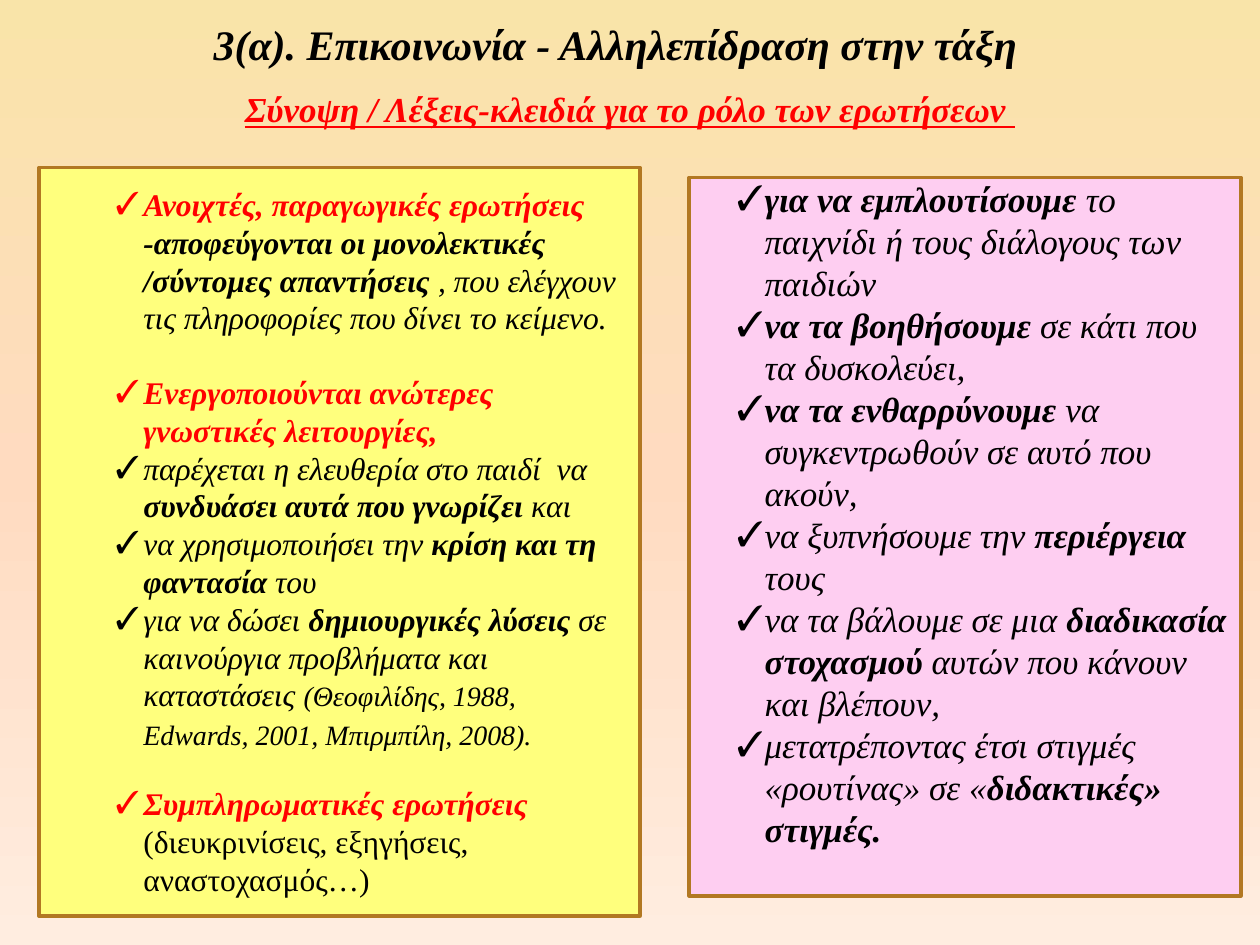
from copy import deepcopy

from lxml.etree import SubElement
from pptx import Presentation
from pptx.dml.color import RGBColor
from pptx.enum.shapes import MSO_SHAPE as Preset
from pptx.enum.text import MSO_ANCHOR as Anchor, PP_ALIGN as Align
from pptx.oxml.ns import qn
from pptx.util import Inches, Pt

BLACK, RED, BROWN = "000000", "FF0000", "B27822"
YELLOW, PINK = "FFFF7D", "FECEF1"
BACKDROP = [("F9E4A9", 0), ("FFDBC0", 0.5), ("FFEDE0", 1)]


def color(value):
    return RGBColor.from_string(value)


def write(para, text, size=18, ink=BLACK, bold=False, italic=True, underline=False):
    span = para.add_run()
    span.text = text
    font = span.font
    font.name, font.size = "Times New Roman", Pt(size)
    font.bold, font.italic, font.underline = bold, italic, underline
    font.color.rgb = color(ink)


class Board:
    def __init__(self, deck):
        self.deck = deck
        self.page = deck.slides.add_slide(deck.slide_layouts[6])

    def across(self, percent):
        return round(self.deck.slide_width * percent / 100)

    def down(self, percent):
        return round(self.deck.slide_height * percent / 100)

    def place(self, left, top, width, height):
        return self.across(left), self.down(top), self.across(width), self.down(height)

    def background(self, stops):
        fill = self.page.background.fill
        fill.gradient()
        fill.gradient_angle = 270
        stop_list = next(self.page.element.iter(qn("a:gsLst")))
        stop_list.insert(1, deepcopy(stop_list[0]))
        for stop, (value, position) in zip(fill.gradient_stops, stops):
            stop.color.rgb = color(value)
            stop.position = position

    def heading(self, text, area, **style):
        frame = self.page.shapes.add_textbox(*self.place(*area)).text_frame
        frame.word_wrap = True
        frame.vertical_anchor = Anchor.MIDDLE
        frame.margin_top = frame.margin_bottom = 0
        para = frame.paragraphs[0]
        para.alignment = Align.CENTER
        write(para, text, bold=True, **style)

    def panel(self, area, fill, items, size, inset, indent):
        box = self.page.shapes.add_shape(Preset.RECTANGLE, *self.place(*area))
        box.shadow.inherit = False
        box.fill.solid()
        box.fill.fore_color.rgb = color(fill)
        box.line.color.rgb = color(BROWN)
        box.line.width = Pt(2)
        frame = box.text_frame
        frame.word_wrap = True
        frame.vertical_anchor = Anchor.TOP
        frame.margin_top, frame.margin_bottom = Pt(inset), 0
        for number, (gap, spans) in enumerate(items):
            para = frame.add_paragraph() if number else frame.paragraphs[0]
            para.alignment = Align.LEFT
            para.line_spacing = Pt(size * 1.2)
            para.space_before = Pt(gap)
            self.bullet(para, indent)
            for text, style in spans:
                write(para, text, **{"size": size, **style})

    def bullet(self, para, indent):
        para.line_spacing = para.line_spacing
        props = para._p.get_or_add_pPr()
        props.set("marL", str(self.across(indent)))
        props.set("indent", str(-self.across(2.2)))
        SubElement(props, qn("a:buFont")).set("typeface", "Times New Roman")
        SubElement(props, qn("a:buChar")).set("char", "✓")


PLAIN, BOLD = {}, {"bold": True}
KEY = {"bold": True, "ink": RED}
UPRIGHT, SMALL = {"italic": False}, {"size": 16}

QUESTIONS = [
    (0, [("Ανοιχτές, παραγωγικές ερωτήσεις", KEY),
         (" -αποφεύγονται οι μονολεκτικές /σύντομες απαντήσεις ", BOLD),
         (", που ελέγχουν τις πληροφορίες που δίνει το κείμενο.", PLAIN)]),
    (21, [("Ενεργοποιούνται ανώτερες γνωστικές λειτουργίες,", KEY)]),
    (0, [("παρέχεται η ελευθερία στο παιδί  να ", PLAIN),
         ("συνδυάσει αυτά που γνωρίζει ", BOLD), ("και", PLAIN)]),
    (0, [("να χρησιμοποιήσει την ", PLAIN),
         ("κρίση και τη φαντασία ", BOLD), ("του", PLAIN)]),
    (0, [("για να δώσει ", PLAIN), ("δημιουργικές λύσεις", BOLD),
         (" σε καινούργια προβλήματα και καταστάσεις ", PLAIN),
         ("(Θεοφιλίδης, 1988, Edwards, 2001, Μπιρμπίλη, 2008).", SMALL)]),
    (19, [("Συμπληρωματικές ερωτήσεις ", KEY),
          ("(διευκρινίσεις, εξηγήσεις, αναστοχασμός…)", UPRIGHT)]),
]

PURPOSES = [
    (0, [("για να εμπλουτίσουμε ", BOLD),
         ("το παιχνίδι ή τους διάλογους των παιδιών", PLAIN)]),
    (0, [("να τα βοηθήσουμε ", BOLD), ("σε κάτι που τα δυσκολεύει,", PLAIN)]),
    (0, [("να τα ενθαρρύνουμε ", BOLD),
         ("να συγκεντρωθούν σε αυτό που ακούν,", PLAIN)]),
    (0, [("να ξυπνήσουμε την ", PLAIN), ("περιέργεια ", BOLD), ("τους", PLAIN)]),
    (0, [("να τα βάλουμε σε μια ", PLAIN), ("διαδικασία στοχασμού ", BOLD),
         ("αυτών που κάνουν και βλέπουν,", PLAIN)]),
    (0, [("μετατρέποντας έτσι στιγμές «ρουτίνας» σε «", PLAIN),
         ("διδακτικές» στιγμές.", BOLD)]),
]


def main():
    deck = Presentation()
    deck.slide_width, deck.slide_height = Inches(10), Inches(7.5)
    board = Board(deck)
    board.background(BACKDROP)
    board.heading("3(α). Επικοινωνία - Αλληλεπίδραση στην τάξη",
                  (0, 0, 97.7, 9.3), size=24)
    board.heading("Σύνοψη / Λέξεις-κλειδιά για το ρόλο των ερωτήσεων ",
                  (0, 9, 100, 5), size=20, ink=RED, underline=True)
    board.panel((3.1, 17.73, 47.7, 79.2), YELLOW, QUESTIONS,
                size=18, inset=10, indent=7.3)
    board.panel((54.7, 18.8, 43.8, 76), PINK, PURPOSES,
                size=20, inset=0, indent=5)
    deck.save("out.pptx")


if __name__ == "__main__":
    main()
